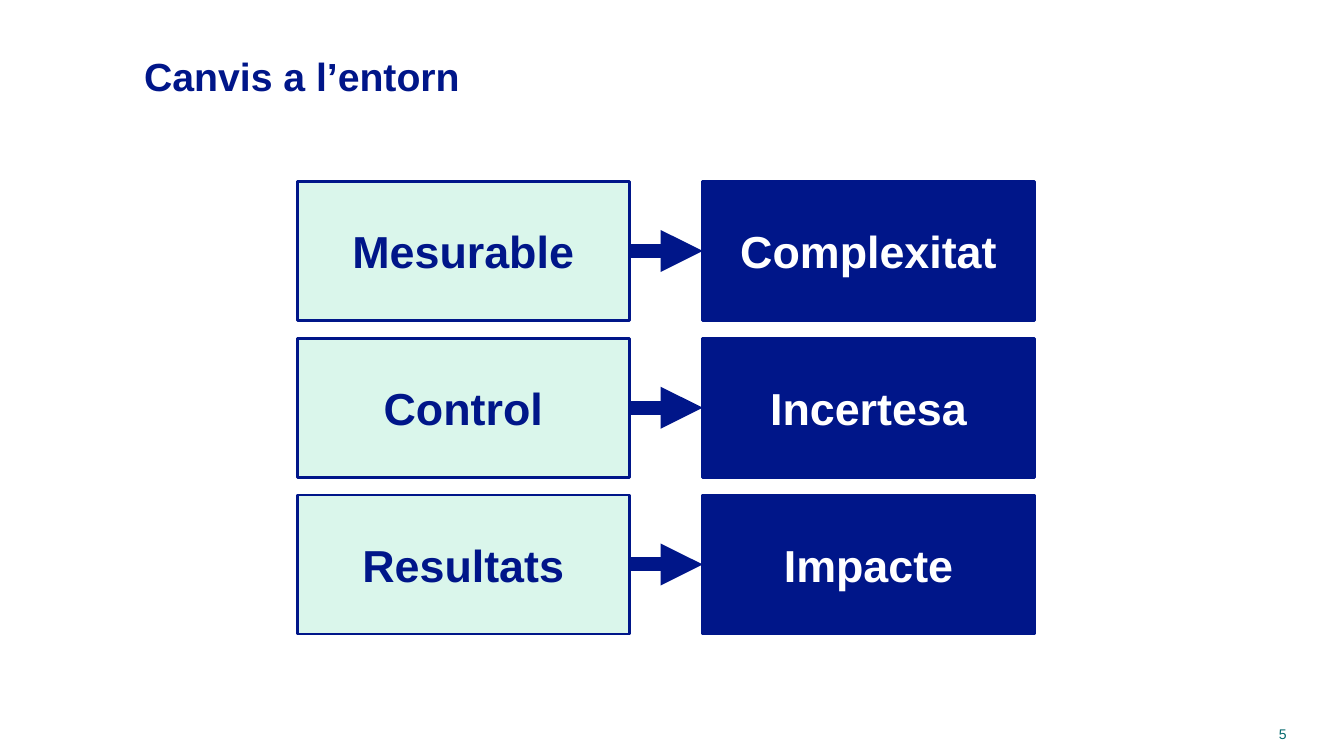
from lxml.etree import SubElement
from pptx import Presentation
from pptx.dml.color import RGBColor
from pptx.enum.shapes import MSO_CONNECTOR, MSO_SHAPE
from pptx.enum.text import MSO_ANCHOR, PP_ALIGN
from pptx.oxml.ns import qn
from pptx.util import Inches, Pt

COLORS = {"navy": "001689", "mint": "DAF6EB", "white": "FFFFFF", "teal": "00676C"}
CHANGES = [
    ("Mesurable", "Complexitat"),
    ("Control", "Incertesa"),
    ("Resultats", "Impacte"),
]


def rgb(name):
    """Return the palette colour with this name."""
    return RGBColor.from_string(COLORS[name])


def write(sp, text, size, color, align, bold=True):
    """Write one vertically centred line of text in a shape."""
    tf = sp.text_frame
    tf.word_wrap = True
    tf.vertical_anchor = MSO_ANCHOR.MIDDLE
    p = tf.paragraphs[0]
    p.alignment = align
    r = p.add_run()
    r.text = text
    r.font.name = "Arial"
    r.font.size = Pt(size)
    r.font.bold = bold
    r.font.color.rgb = rgb(color)


def add_title(s, text, x, y, w, h):
    """Place the slide title in the title placeholder."""
    sp = s.shapes.title
    sp.left, sp.top, sp.width, sp.height = map(Inches, (x, y, w, h))
    write(sp, text, 28, "navy", PP_ALIGN.LEFT)


def add_box(s, text, fill, color, x, y, w, h):
    """Draw one labelled box."""
    sp = s.shapes.add_shape(MSO_SHAPE.RECTANGLE, *map(Inches, (x, y, w, h)))
    sp.shadow.inherit = False
    sp.fill.solid()
    sp.fill.fore_color.rgb = rgb(fill)
    sp.line.color.rgb = rgb("navy")
    sp.line.width = Pt(2)
    write(sp, text, 32, color, PP_ALIGN.CENTER)
    return sp


def add_arrow(s, start, end):
    """Connect the right side of one box to the left side of another."""
    cxn = s.shapes.add_connector(MSO_CONNECTOR.STRAIGHT, 0, 0, 0, 0)
    cxn.begin_connect(start, 3)
    cxn.end_connect(end, 1)
    cxn.line.color.rgb = rgb("navy")
    cxn.line.width = Pt(10)
    SubElement(cxn.line._get_or_add_ln(), qn("a:tailEnd"), type="triangle")
    SubElement(cxn._element.spPr, qn("a:effectLst"))


def add_changes(s, x, y, w, h):
    """Draw the rows of before and after boxes joined by arrows."""
    box_w, box_h = 3.29, 1.38
    pitch = (h - box_h) / (len(CHANGES) - 1)
    for i, (before, after) in enumerate(CHANGES):
        top = y + i * pitch
        left = add_box(s, before, "mint", "navy", x, top, box_w, box_h)
        right = add_box(s, after, "navy", "white", x + w - box_w, top, box_w, box_h)
        add_arrow(s, left, right)


def add_page_number(s, text, x, y, w, h):
    """Write the page number in the bottom corner."""
    sp = s.shapes.add_textbox(*map(Inches, (x, y, w, h)))
    write(sp, text, 10, "teal", PP_ALIGN.RIGHT, bold=False)


def main():
    """Build the slide and save it."""
    prs = Presentation()
    prs.slide_width, prs.slide_height = Inches(13.33), Inches(7.5)
    s = prs.slides.add_slide(prs.slide_layouts[5])
    add_title(s, "Canvis a l’entorn", 1.33, 0.44, 9.2, 0.63)
    add_changes(s, 2.95, 1.8, 7.31, 4.49)
    add_page_number(s, "5", 12.02, 7.14, 0.84, 0.29)
    prs.save("out.pptx")


if __name__ == "__main__":
    main()
